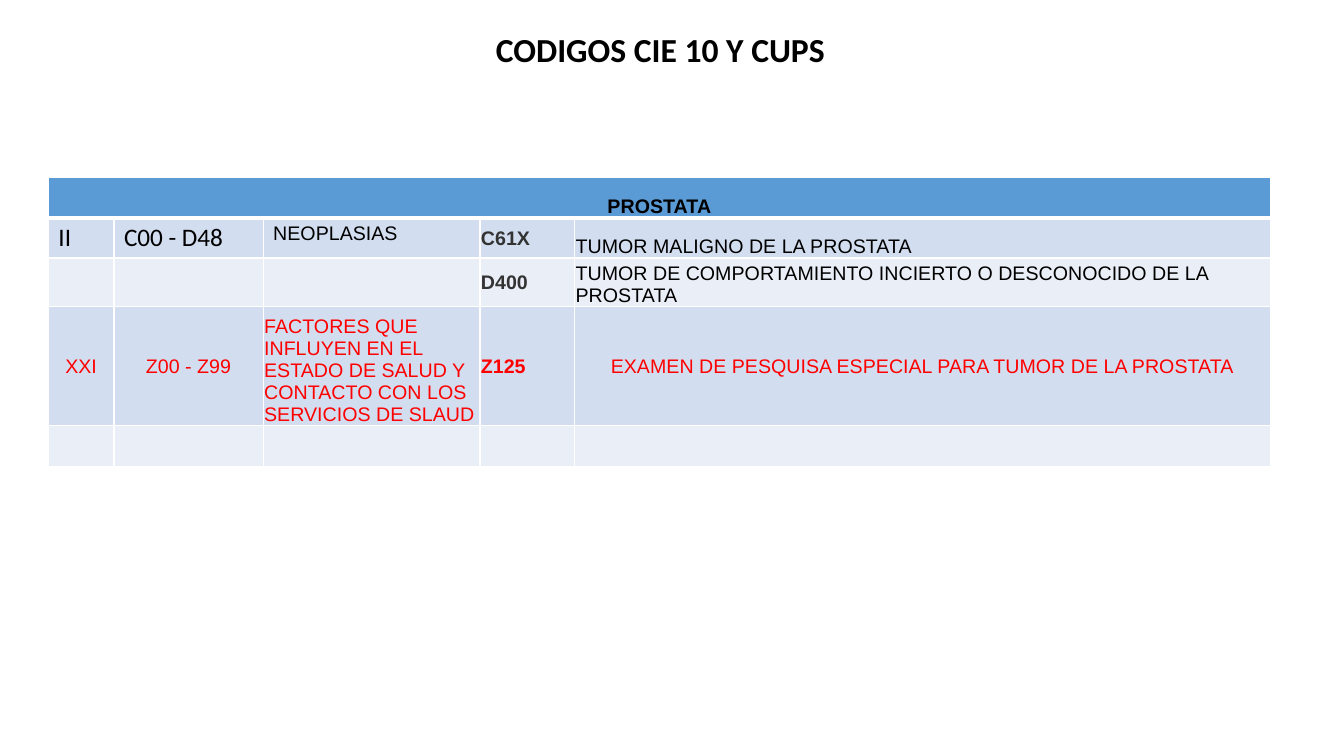
from dataclasses import dataclass

from lxml.etree import SubElement
from pptx import Presentation
from pptx.dml.color import RGBColor
from pptx.enum.text import MSO_ANCHOR, PP_ALIGN
from pptx.oxml.ns import qn
from pptx.util import Inches, Pt


@dataclass(frozen=True)
class Theme:
    black: str = "000000"
    gray: str = "333333"
    red: str = "FF0000"
    border: str = "FFFFFF"
    header: str = "5B9BD5"
    bands: tuple = ("D2DEEF", "EAEFF7")
    heading_font: str = "Calibri"
    body_font: str = "Arial"
    title_size: int = 24
    code_size: int = 18
    body_size: int = 14


@dataclass(frozen=True)
class CellText:
    text: str
    color: str = "000000"
    bold: bool = False
    font: str = "Arial"
    size: int = 14
    align: PP_ALIGN = PP_ALIGN.LEFT
    anchor: MSO_ANCHOR = MSO_ANCHOR.MIDDLE
    tight: bool = True


THEME = Theme()
COLUMN_WIDTHS = (0.65, 1.48, 2.15, 0.94, 6.9)
ROW_HEIGHTS = (0.4, 0.4, 0.48, 1.18, 0.41)


def chapter(text, font=THEME.heading_font, size=THEME.code_size):
    return CellText(text, font=font, size=size, anchor=MSO_ANCHOR.TOP, tight=False)


def code(text, color=THEME.gray):
    return CellText(text, color, bold=True, align=PP_ALIGN.JUSTIFY)


def description(text, color=THEME.black):
    return CellText(text, color, anchor=MSO_ANCHOR.BOTTOM)


def highlight(text):
    return CellText(text, THEME.red, align=PP_ALIGN.CENTER)


ROWS = (
    (CellText("PROSTATA", bold=True, align=PP_ALIGN.CENTER, anchor=MSO_ANCHOR.BOTTOM),
     None, None, None, None),
    (chapter("II"), chapter("C00 - D48"),
     chapter("NEOPLASIAS", THEME.body_font, THEME.body_size),
     code("C61X"), description("TUMOR MALIGNO DE LA PROSTATA")),
    (None, None, None, code("D400"),
     description("TUMOR DE COMPORTAMIENTO INCIERTO O DESCONOCIDO DE LA PROSTATA")),
    (highlight("XXI"), highlight("Z00 - Z99"),
     description("FACTORES QUE INFLUYEN EN EL ESTADO DE SALUD Y CONTACTO "
                 "CON LOS SERVICIOS DE SLAUD", THEME.red),
     code("Z125", THEME.red),
     highlight("EXAMEN DE PESQUISA ESPECIAL PARA TUMOR DE LA PROSTATA")),
    (None, None, None, None, None),
)


def add_run(paragraph, text, font, size, color, bold):
    run = paragraph.add_run()
    run.text = text
    run.font.name = font
    run.font.size = Pt(size)
    run.font.bold = bold
    run.font.color.rgb = RGBColor.from_string(color)


def add_title(slide, text):
    box = slide.shapes.add_textbox(Inches(1.45), Inches(0.24), Inches(10.2), Inches(0.5))
    box.text_frame.word_wrap = True
    paragraph = box.text_frame.paragraphs[0]
    paragraph.alignment = PP_ALIGN.CENTER
    add_run(paragraph, text, THEME.heading_font, THEME.title_size, THEME.black, True)


def set_borders(cell, row_index):
    widths = {"L": 1, "R": 1, "T": 3 if row_index == 1 else 1, "B": 3 if row_index == 0 else 1}
    properties = cell._tc.get_or_add_tcPr()
    for side, width in widths.items():
        line = SubElement(properties, qn(f"a:ln{side}"), w=str(Pt(width)))
        fill = SubElement(line, qn("a:solidFill"))
        SubElement(fill, qn("a:srgbClr"), val=THEME.border)


def fill_cell(cell, color):
    cell.fill.solid()
    cell.fill.fore_color.rgb = RGBColor.from_string(color)


def write_cell(cell, content):
    cell.vertical_anchor = content.anchor
    if content.tight:
        cell.margin_left = cell.margin_right = cell.margin_top = Inches(0.01)
        cell.margin_bottom = Inches(0)
    paragraph = cell.text_frame.paragraphs[0]
    paragraph.alignment = content.align
    add_run(paragraph, content.text, content.font, content.size, content.color, content.bold)


def add_code_table(slide):
    frame = slide.shapes.add_table(
        len(ROWS), len(COLUMN_WIDTHS), Inches(0.48), Inches(1.76),
        Inches(sum(COLUMN_WIDTHS)), Inches(sum(ROW_HEIGHTS)))
    table = frame.table
    for column, width in zip(table.columns, COLUMN_WIDTHS):
        column.width = Inches(width)
    for row, height in zip(table.rows, ROW_HEIGHTS):
        row.height = Inches(height)
    table.cell(0, 0).merge(table.cell(0, len(COLUMN_WIDTHS) - 1))
    for row_index, contents in enumerate(ROWS):
        color = THEME.bands[(row_index - 1) % 2] if row_index else THEME.header
        for column_index, content in enumerate(contents):
            cell = table.cell(row_index, column_index)
            set_borders(cell, row_index)
            fill_cell(cell, color)
            if content:
                write_cell(cell, content)


def main():
    presentation = Presentation()
    presentation.slide_width = Inches(13.33)
    presentation.slide_height = Inches(7.5)
    slide = presentation.slides.add_slide(presentation.slide_layouts[6])
    add_title(slide, "CODIGOS CIE 10 Y CUPS")
    add_code_table(slide)
    presentation.save("out.pptx")


if __name__ == "__main__":
    main()
